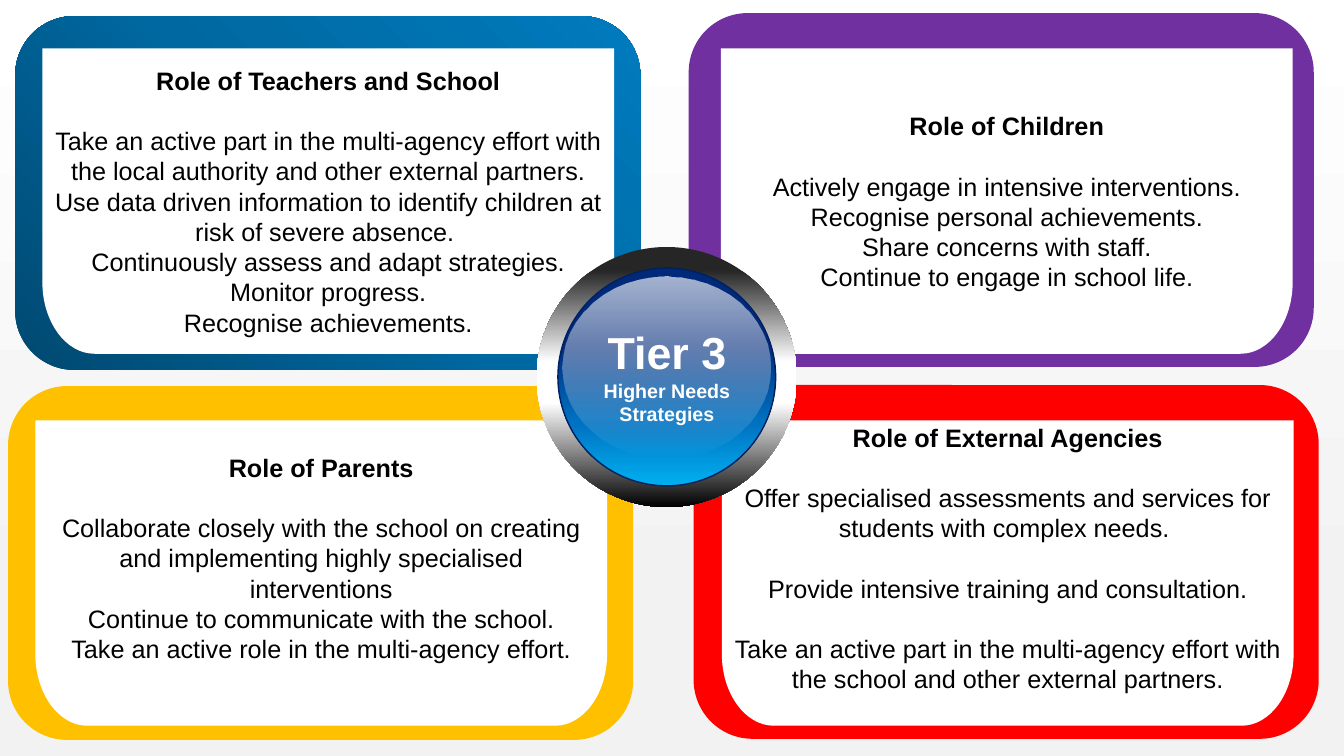
from dataclasses import dataclass
from typing import Optional, Union

from lxml.etree import SubElement
from pptx import Presentation
from pptx.dml.color import RGBColor
from pptx.dml.fill import FillFormat
from pptx.enum.shapes import MSO_SHAPE
from pptx.enum.text import MSO_ANCHOR, PP_ALIGN
from pptx.oxml.ns import qn
from pptx.shapes.autoshape import Shape
from pptx.shapes.shapetree import GroupShapes, SlideShapes
from pptx.slide import Slide
from pptx.text.text import TextFrame
from pptx.util import Emu, Inches, Pt

SLIDE_WIDTH = Inches(13.33)
SLIDE_HEIGHT = Inches(7.5)


def columns(count: float) -> Emu:
    return Emu(round(SLIDE_WIDTH * count / 100))


def rows(count: float) -> Emu:
    return Emu(round(SLIDE_HEIGHT * count / 100))


@dataclass(frozen=True)
class Stop:
    position: int
    color: str
    opacity: int = 100


@dataclass(frozen=True)
class Gradient:
    stops: tuple[Stop, ...]
    angle: int = 270


Paint = Union[str, Gradient]


@dataclass(frozen=True)
class Theme:
    font: str = "Arial"
    body_size: int = 18
    title_size: int = 32
    subtitle_size: int = 14
    blank_line: float = 21.6
    ink: str = "000000"
    paper: str = "FFFFFF"
    parents: str = "FFC000"
    children: str = "7030A0"
    agencies: str = "FF0000"
    disc_line: str = "002060"
    teachers: Gradient = Gradient((Stop(0, "004971"), Stop(50, "0068A0"), Stop(100, "007BBE")), 45)
    backdrop: Gradient = Gradient((Stop(0, "FFFFFF"), Stop(81, "F2F2F2"), Stop(100, "F2F2F2")))
    ring: Gradient = Gradient(
        (Stop(9, "262626"), Stop(44, "FFFFFF"), Stop(60, "FFFFFF"), Stop(100, "000000"))
    )
    disc: Gradient = Gradient((Stop(35, "00297A"), Stop(70, "0070C0"), Stop(100, "00B0F0")))
    gloss: Gradient = Gradient((Stop(0, "FFFFFF", 65), Stop(100, "FFFFFF", 0)))


THEME = Theme()


@dataclass(frozen=True)
class Area:
    column: float
    row: float
    width: float
    height: float

    def box(self) -> tuple[Emu, Emu, Emu, Emu]:
        return columns(self.column), rows(self.row), columns(self.width), rows(self.height)


@dataclass(frozen=True)
class Panel:
    title: str
    groups: tuple[tuple[str, ...], ...]
    paint: Paint
    rim: tuple[float, float]
    card: tuple[float, float]
    bottom_inset: float = 0


@dataclass(frozen=True)
class Disc:
    area: Area
    paint: Paint
    line: Optional[str] = None


RIM_SIZE = (46.51, 46.8)
CARD_SIZE = (42.54, 40.4)
CORNER = (3.87, 9.47)
CURVE_PULL = 0.45

PANELS = (
    Panel(
        "Role of Teachers and School",
        ((
            "Take an active part in the multi-agency effort with the local authority and other external partners.",
            "Use data driven information to identify children at risk of severe absence. ",
            "Continuously assess and adapt strategies. Monitor progress.",
            "Recognise achievements.",
        ),),
        THEME.teachers, (1.13, 2.13), (3.15, 6.4),
    ),
    Panel(
        "Role of Parents",
        ((
            "Collaborate closely with the school on creating and implementing highly specialised interventions",
            "Continue to communicate with the school.",
            "Take an active role in the multi-agency effort.",
        ),),
        THEME.parents, (0.6, 51.07), (2.63, 55.6), 4,
    ),
    Panel(
        "Role of Children",
        ((
            "Actively engage in intensive interventions. Recognise personal achievements.",
            "Share concerns with staff.",
            "Continue to engage in school life.",
        ),),
        THEME.children, (51.24, 1.73), (53.64, 6.4),
    ),
    Panel(
        "Role of External Agencies",
        (
            ("Offer specialised assessments and services for students with complex needs. ",),
            ("Provide intensive training and consultation.",),
            ("Take an active part in the multi-agency effort with the school and other external partners.",),
        ),
        THEME.agencies, (51.61, 50.93), (53.71, 55.6), 4,
    ),
)

DISCS = (
    Disc(Area(39.93, 32.67, 19.35, 34.4), THEME.ring),
    Disc(Area(41.51, 35.47, 16.2, 28.8), THEME.disc, THEME.disc_line),
    Disc(Area(41.88, 36.53, 15.45, 24.13), THEME.gloss),
)
LABEL_AREA = Area(43.25, 42.27, 12.75, 14.8)


def apply_gradient(fill: FillFormat, owner, gradient: Gradient) -> None:
    fill.gradient()
    fill.gradient_angle = gradient.angle
    stop_list = next(owner.iter(qn("a:gsLst")))
    for old_stop in list(stop_list):
        stop_list.remove(old_stop)
    for stop in gradient.stops:
        node = SubElement(stop_list, qn("a:gs"), pos=str(stop.position * 1000))
        color = SubElement(node, qn("a:srgbClr"), val=stop.color)
        if stop.opacity < 100:
            SubElement(color, qn("a:alpha"), val=str(stop.opacity * 1000))


def style_shape(shape: Shape, paint: Paint, line: Optional[str] = None) -> None:
    shape.shadow.inherit = False
    if isinstance(paint, Gradient):
        apply_gradient(shape.fill, shape.element, paint)
    else:
        shape.fill.solid()
        shape.fill.fore_color.rgb = RGBColor.from_string(paint)
    if line:
        shape.line.color.rgb = RGBColor.from_string(line)
        shape.line.width = Pt(1)
    else:
        shape.line.fill.background()


def write_line(frame: TextFrame, index: int, text: str, size: int, color: str, bold: bool):
    para = frame.add_paragraph() if index else frame.paragraphs[0]
    para.text = text
    para.alignment = PP_ALIGN.CENTER
    para.font.name = THEME.font
    para.font.size = Pt(size)
    para.font.bold = bold
    para.font.color.rgb = RGBColor.from_string(color)
    return para


def round_corner(segment, start: tuple[int, int], corner: tuple[int, int], end: tuple[int, int]) -> None:
    segment.tag = qn("a:cubicBezTo")
    for point in list(segment):
        segment.remove(point)
    pulls = [
        tuple(round(c + (p - c) * CURVE_PULL) for p, c in zip(point, corner))
        for point in (start, end)
    ]
    for x, y in (*pulls, end):
        SubElement(segment, qn("a:pt"), x=str(x), y=str(y))


def draw_card(shapes: SlideShapes, area: Area) -> Shape:
    left, top, width, height = area.box()
    radius_x, radius_y = columns(CORNER[0]), rows(CORNER[1])
    outline = [
        (width, 0), (width, height - radius_y), (width - radius_x, height),
        (radius_x, height), (0, height - radius_y),
    ]
    builder = shapes.build_freeform(0, 0)
    builder.add_line_segments(outline)
    card = builder.convert_to_shape(left, top)
    segments = list(card.element.iter(qn("a:lnTo")))
    round_corner(segments[2], outline[1], (width, height), outline[2])
    round_corner(segments[4], outline[3], (0, height), outline[4])
    return card


def draw_panel(shapes: SlideShapes, panel: Panel) -> None:
    rim = shapes.add_shape(MSO_SHAPE.ROUNDED_RECTANGLE, *Area(*panel.rim, *RIM_SIZE).box())
    style_shape(rim, panel.paint)
    card = draw_card(shapes, Area(*panel.card, *CARD_SIZE))
    style_shape(card, THEME.paper)
    frame = card.text_frame
    frame.word_wrap = True
    frame.vertical_anchor = MSO_ANCHOR.MIDDLE
    frame.margin_top = 0
    frame.margin_bottom = rows(panel.bottom_inset)
    write_line(frame, 0, panel.title, THEME.body_size, THEME.ink, True)
    for group in panel.groups:
        for index, text in enumerate(group):
            para = write_line(frame, 1, text, THEME.body_size, THEME.ink, False)
            if index == 0:
                para.space_before = Pt(THEME.blank_line)


def draw_emblem(shapes: GroupShapes) -> None:
    for disc in DISCS:
        style_shape(shapes.add_shape(MSO_SHAPE.OVAL, *disc.area.box()), disc.paint, disc.line)
    frame = shapes.add_textbox(*LABEL_AREA.box()).text_frame
    frame.word_wrap = True
    frame.vertical_anchor = MSO_ANCHOR.MIDDLE
    write_line(frame, 0, "Tier 3", THEME.title_size, THEME.paper, True)
    write_line(frame, 1, "Higher Needs Strategies", THEME.subtitle_size, THEME.paper, True)


def draw_page(page: Slide) -> None:
    apply_gradient(page.background.fill, page.element, THEME.backdrop)
    for panel in PANELS:
        draw_panel(page.shapes, panel)
    draw_emblem(page.shapes.add_group_shape().shapes)


def main() -> None:
    deck = Presentation()
    deck.slide_width = SLIDE_WIDTH
    deck.slide_height = SLIDE_HEIGHT
    draw_page(deck.slides.add_slide(deck.slide_layouts[6]))
    deck.save("out.pptx")


if __name__ == "__main__":
    main()
